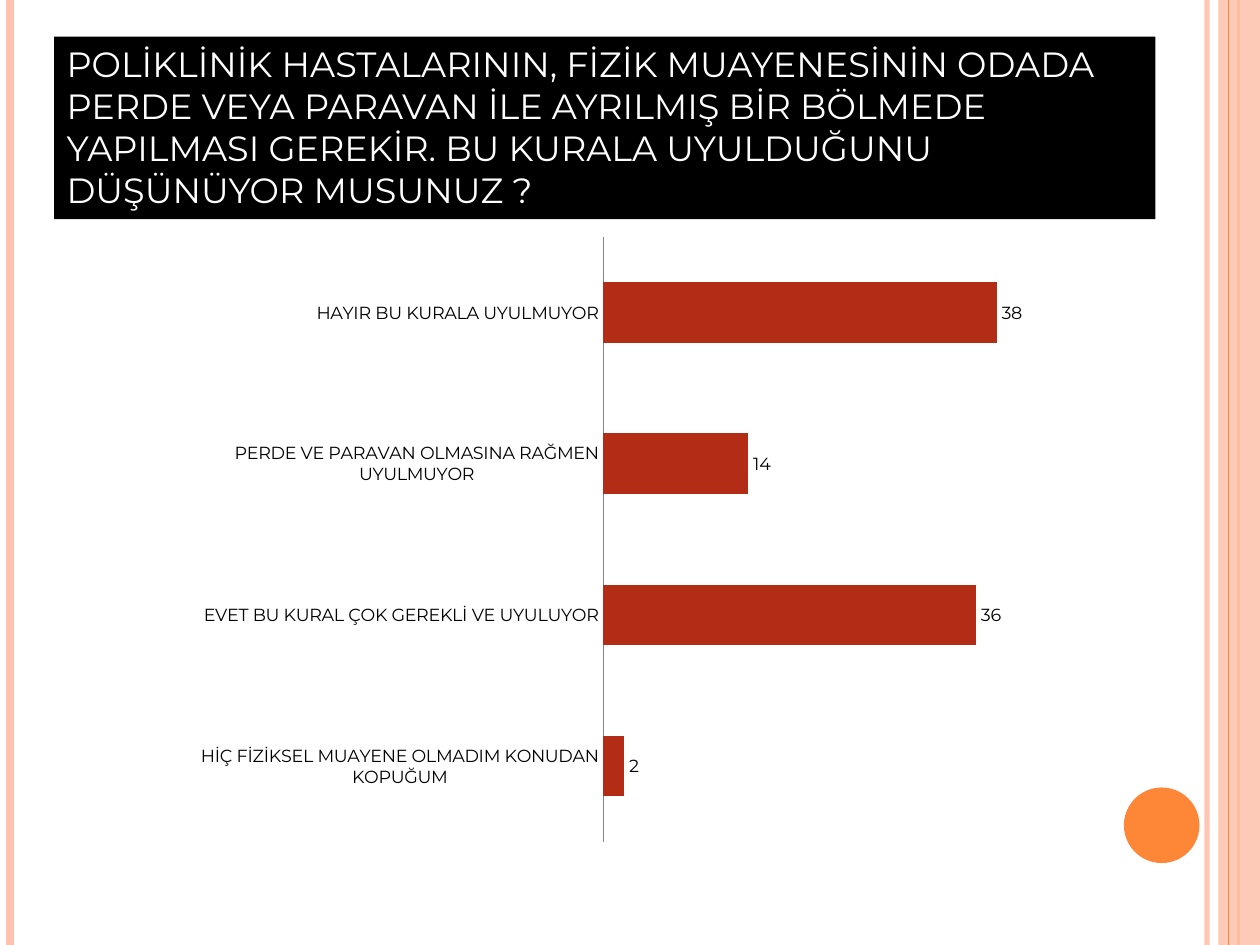
from lxml import etree
from pptx import Presentation
from pptx import util as u
from pptx.chart import data as chart_data
from pptx.dml import color
from pptx.enum import chart as ch, shapes, text
from pptx.oxml import ns

COLORS = {"peach": "FEC3AE", "orange": "FE8637", "red": "B32C16",
          "black": "000000", "white": "FFFFFF", "grey": "868686"}
FONT = "Montserrat"


def rgb(name):
    return color.RGBColor.from_string(COLORS[name])


def set_alpha(parent, percent):
    fill_color = parent.find(".//" + ns.qn("a:srgbClr"))
    etree.SubElement(fill_color, ns.qn("a:alpha")).set("val", str(percent * 1000))


deck = Presentation()
deck.slide_width, deck.slide_height = u.Inches(10), u.Inches(7.5)
page = deck.slides.add_slide(deck.slide_layouts[6])

# Vertical stripes, panel, circle and title bar, from back to front
parts = [
    ("stripe", 9.58, "peach", 3, 93),
    ("stripe", 0.08, "peach", 4.5, 100),
    ("stripe", 9.83, "orange", 1.5, 100),
    ("RECTANGLE", (9.67, 0, 0.33, 7.5), "peach", None, 87),
    ("stripe", 9.75, "orange", 0.75, 100),
    ("OVAL", (8.92, 6.25, 0.6, 0.6), "orange", None, 100),
    ("RECTANGLE", (0.43, 0.29, 8.74, 1.45), "black", None, 100),
]
for kind, place, paint, width, alpha in parts:
    if kind == "stripe":
        x = u.Inches(place)
        item = page.shapes.add_connector(
            shapes.MSO_CONNECTOR.STRAIGHT, x, 0, x, deck.slide_height)
        item.line.color.rgb = rgb(paint)
        item.line.width = u.Pt(width)
        etree.SubElement(item.element.spPr, ns.qn("a:effectLst"))
    else:
        item = page.shapes.add_shape(
            shapes.MSO_SHAPE[kind], *[u.Inches(n) for n in place])
        item.fill.solid()
        item.fill.fore_color.rgb = rgb(paint)
        item.line.fill.background()
        item.shadow.inherit = False
    if alpha < 100:
        set_alpha(item.element.spPr, alpha)

# Question in the title bar, the last part drawn
frame = item.text_frame
frame_format = {"word_wrap": True, "vertical_anchor": text.MSO_ANCHOR.TOP,
                "auto_size": text.MSO_AUTO_SIZE.SHAPE_TO_FIT_TEXT}
for name, value in frame_format.items():
    setattr(frame, name, value)
para = frame.paragraphs[0]
para.alignment = text.PP_ALIGN.LEFT
span = para.add_run()
span.text = ("POLİKLİNİK HASTALARININ, FİZİK MUAYENESİNİN ODADA PERDE VEYA "
             "PARAVAN İLE AYRILMIŞ BİR BÖLMEDE YAPILMASI GEREKİR. BU KURALA "
             "UYULDUĞUNU DÜŞÜNÜYOR MUSUNUZ ?")
span.font.name, span.font.size = FONT, u.Pt(20)
span.font.color.rgb = rgb("white")

# Bar chart of the answers
answers = {
    "HİÇ FİZİKSEL MUAYENE OLMADIM KONUDAN KOPUĞUM": 2,
    "EVET BU KURAL ÇOK GEREKLİ VE UYULUYOR": 36,
    "PERDE VE PARAVAN OLMASINA RAĞMEN UYULMUYOR": 14,
    "HAYIR BU KURALA UYULMUYOR": 38,
}
data = chart_data.CategoryChartData()
data.categories = list(answers)
data.add_series("Series 1", list(answers.values()))
chart = page.shapes.add_chart(
    ch.XL_CHART_TYPE.BAR_CLUSTERED, u.Inches(1.46), u.Inches(1.78),
    u.Inches(6.75), u.Inches(5), data).chart
chart.has_legend = chart.has_title = False
chart.font.name, chart.font.size = FONT, u.Pt(10)
chart.font.color.rgb = rgb("black")

# Bars and value labels
plot = chart.plots[0]
plot_format = {"gap_width": 150, "overlap": -25, "vary_by_categories": False,
               "has_data_labels": True}
for name, value in plot_format.items():
    setattr(plot, name, value)
plot.data_labels.show_value = True
plot.data_labels.position = ch.XL_LABEL_POSITION.OUTSIDE_END
bars = plot.series[0].format.fill
bars.solid()
bars.fore_color.rgb = rgb("red")

# Axes
axis = chart.category_axis
axis.major_tick_mark = axis.minor_tick_mark = ch.XL_TICK_MARK.NONE
axis.format.line.color.rgb = rgb("grey")
value_format = {"visible": False, "has_major_gridlines": False,
                "minimum_scale": 0, "maximum_scale": 40}
for name, value in value_format.items():
    setattr(chart.value_axis, name, value)

deck.save("out.pptx")
